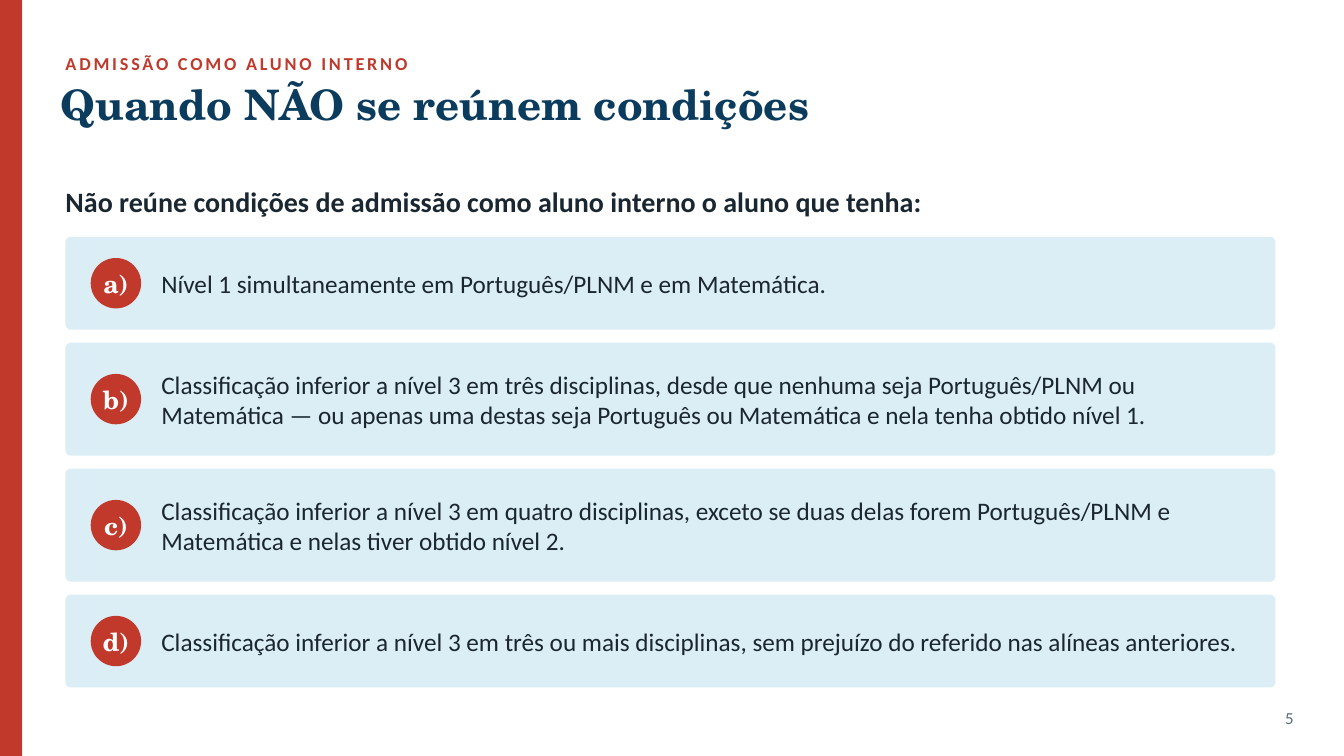
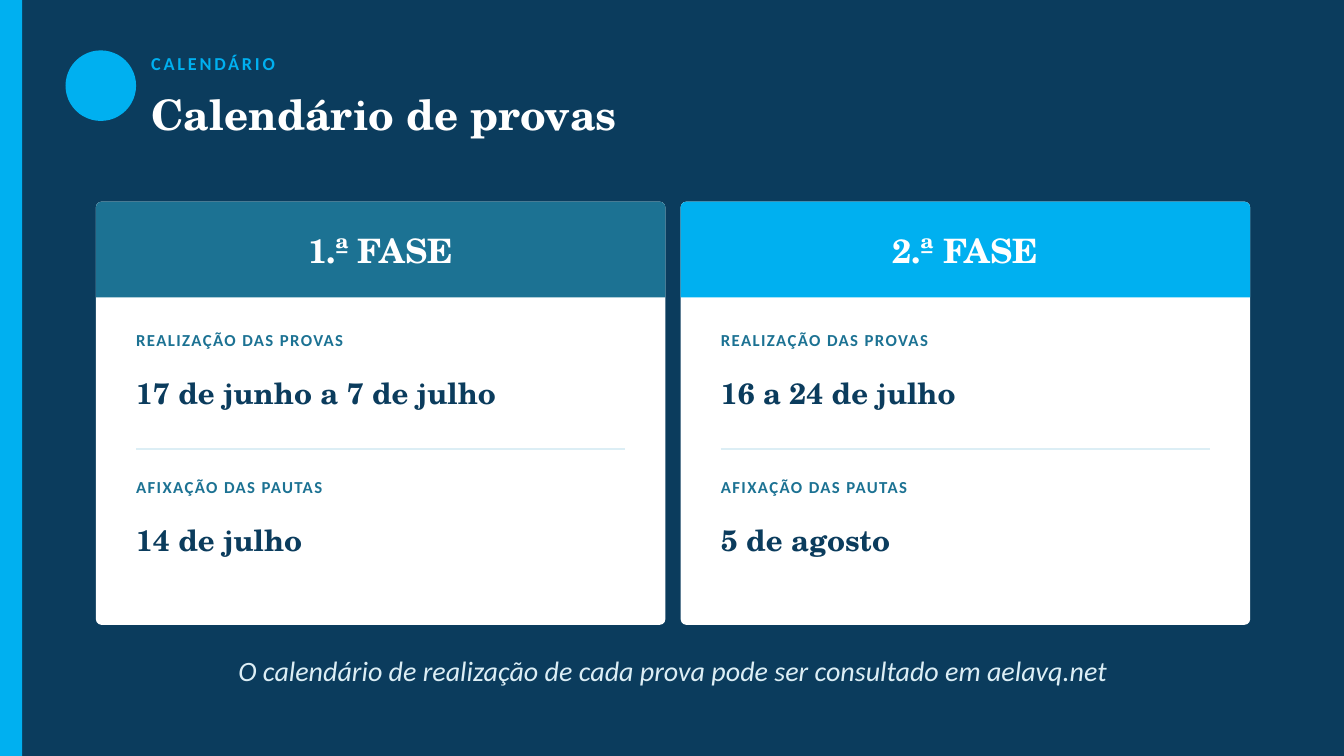
"""Build two slides on pupil admission conditions and the exam calendar."""
from lxml import etree
from pptx import Presentation
from pptx.dml.color import RGBColor
from pptx.enum.shapes import MSO_CONNECTOR, MSO_SHAPE
from pptx.enum.text import MSO_ANCHOR, PP_ALIGN
from pptx.oxml.ns import qn
from pptx.util import Inches, Pt

RECTANGLE = MSO_SHAPE.RECTANGLE
ROUNDED = MSO_SHAPE.ROUNDED_RECTANGLE
ROUNDED_TOP = MSO_SHAPE.ROUND_2_SAME_RECTANGLE
OVAL = MSO_SHAPE.OVAL
STRAIGHT = MSO_CONNECTOR.STRAIGHT
TOP, MIDDLE = MSO_ANCHOR.TOP, MSO_ANCHOR.MIDDLE
LEFT, CENTER, RIGHT = PP_ALIGN.LEFT, PP_ALIGN.CENTER, PP_ALIGN.RIGHT

WHITE = RGBColor(0xFF, 0xFF, 0xFF)
NAVY = RGBColor(0x0B, 0x3C, 0x5D)
TEAL = RGBColor(0x1C, 0x72, 0x93)
CYAN = RGBColor(0x00, 0xB0, 0xF0)
PALE = RGBColor(0xDC, 0xEE, 0xF5)
RED = RGBColor(0xC0, 0x39, 0x2B)
INK = RGBColor(0x1A, 0x26, 0x30)
GREY = RGBColor(0x5A, 0x6B, 0x75)

BODY_FONT = "Calibri"
TITLE_FONT = "TeX Gyre Schola"


def add_filled(page, kind, at, color, radius=None):
    """Add a plain filled shape; radius is the corner radius in inches."""
    shape = page.shapes.add_shape(kind, *map(Inches, at))
    shape.shadow.inherit = False
    shape.fill.solid()
    shape.fill.fore_color.rgb = color
    shape.line.fill.background()
    if radius:
        shape.adjustments[0] = radius / min(at[2:])
    return shape


def write(box, text, size, color, font=BODY_FONT, bold=True, italic=False,
          align=LEFT, anchor=MIDDLE, tracking=0, spacing=None):
    """Set the text of a box, without insets, in one style."""
    frame = box.text_frame
    frame.text = text
    frame.word_wrap = True
    frame.vertical_anchor = anchor
    frame.margin_left = frame.margin_right = 0
    frame.margin_top = frame.margin_bottom = 0
    para = frame.paragraphs[0]
    para.alignment = align
    if spacing:
        para.line_spacing = spacing
    span = para.runs[0]
    span.font.name = font
    span.font.size = Pt(size)
    span.font.bold = bold
    span.font.italic = italic
    span.font.color.rgb = color
    if tracking:
        span._r.get_or_add_rPr().set("spc", str(tracking * 100))


deck = Presentation()
deck.slide_width = Inches(13.33)
deck.slide_height = Inches(7.5)

headings = [
    ("ADMISSÃO COMO ALUNO INTERNO", "Quando NÃO se reúnem condições",
     WHITE, RED, NAVY, 0.65, (0.6, 0.78, 12.1, 0.95), TOP),
    ("CALENDÁRIO", "Calendário de provas",
     NAVY, CYAN, WHITE, 1.5, (1.5, 0.78, 11, 0.7), MIDDLE),
]
for kicker, title, background, accent, title_color, kicker_left, title_at, anchor in headings:
    page = deck.slides.add_slide(deck.slide_layouts[6])
    page.background.fill.solid()
    page.background.fill.fore_color.rgb = background
    add_filled(page, RECTANGLE, (0, 0, 0.22, 7.5), accent)
    box = page.shapes.add_textbox(*map(Inches, (kicker_left, 0.45, 11, 0.35)))
    write(box, kicker, 13, accent, tracking=2)
    box = page.shapes.add_textbox(*map(Inches, title_at))
    write(box, title, 30, title_color, TITLE_FONT, anchor=anchor)

conditions_page, calendar_page = deck.slides

box = conditions_page.shapes.add_textbox(*map(Inches, (0.65, 1.75, 12, 0.5)))
write(box, "Não reúne condições de admissão como aluno interno o aluno que tenha:", 20, INK)

conditions = [
    ("a)", 0.92, "Nível 1 simultaneamente em Português/PLNM e em Matemática."),
    ("b)", 1.12, "Classificação inferior a nível 3 em três disciplinas, desde que nenhuma "
                 "seja Português/PLNM ou Matemática — ou apenas uma destas seja Português "
                 "ou Matemática e nela tenha obtido nível 1."),
    ("c)", 1.12, "Classificação inferior a nível 3 em quatro disciplinas, exceto se duas "
                 "delas forem Português/PLNM e Matemática e nelas tiver obtido nível 2."),
    ("d)", 0.92, "Classificação inferior a nível 3 em três ou mais disciplinas, sem "
                 "prejuízo do referido nas alíneas anteriores."),
]
ROW_GAP = 0.13
BADGE = 0.5
top = 2.35
for letter, height, text in conditions:
    add_filled(conditions_page, ROUNDED, (0.65, top, 12, height), PALE, 0.05)
    badge_top = top + (height - BADGE) / 2
    badge = add_filled(conditions_page, OVAL, (0.9, badge_top, BADGE, BADGE), RED)
    write(badge, letter, 18, WHITE, TITLE_FONT, align=CENTER)
    badge.text_frame.word_wrap = False
    box = conditions_page.shapes.add_textbox(*map(Inches, (1.6, top, 10.85, height)))
    write(box, text, 18, INK, bold=False, spacing=1.02)
    top += height + ROW_GAP

box = conditions_page.shapes.add_textbox(*map(Inches, (12.43, 6.95, 0.4, 0.35)))
write(box, "5", 12, GREY, bold=False, align=RIGHT)

add_filled(calendar_page, OVAL, (0.65, 0.5, 0.7, 0.7), CYAN)

phases = [
    ("1.ª FASE", TEAL, "17 de junho a 7 de julho", "14 de julho"),
    ("2.ª FASE", CYAN, "16 a 24 de julho", "5 de agosto"),
]
CARD_WIDTH = 5.65
CARD_GAP = 0.15
PADDING = 0.4
inner_width = CARD_WIDTH - 2 * PADDING
for column, (phase, color, exam_dates, results_date) in enumerate(phases):
    left = 0.95 + column * (CARD_WIDTH + CARD_GAP)
    inner_left = left + PADDING
    add_filled(calendar_page, ROUNDED, (left, 2, CARD_WIDTH, 4.2), WHITE, 0.06)
    header = add_filled(calendar_page, ROUNDED_TOP, (left, 2, CARD_WIDTH, 0.95), color, 0.06)
    write(header, phase, 24, WHITE, TITLE_FONT, align=CENTER)
    entries = [("REALIZAÇÃO DAS PROVAS", exam_dates), ("AFIXAÇÃO DAS PAUTAS", results_date)]
    for row, (label, date) in enumerate(entries):
        top = 3.2 + row * 1.45
        box = calendar_page.shapes.add_textbox(*map(Inches, (inner_left, top, inner_width, 0.35)))
        write(box, label, 12, TEAL, tracking=1)
        box = calendar_page.shapes.add_textbox(
            *map(Inches, (inner_left, top + 0.35, inner_width, 0.7)))
        write(box, date, 21, NAVY, TITLE_FONT)
    divider = calendar_page.shapes.add_connector(
        STRAIGHT, *map(Inches, (inner_left, 4.45, inner_left + inner_width, 4.45)))
    divider.line.color.rgb = PALE
    divider.line.width = Pt(1.5)
    etree.SubElement(divider._element.spPr, qn("a:effectLst"))

box = calendar_page.shapes.add_textbox(*map(Inches, (0.95, 6.45, 11.45, 0.4)))
write(box, "O calendário de realização de cada prova pode ser consultado em aelavq.net",
      20, PALE, bold=False, italic=True, align=CENTER)

deck.save("out.pptx")
